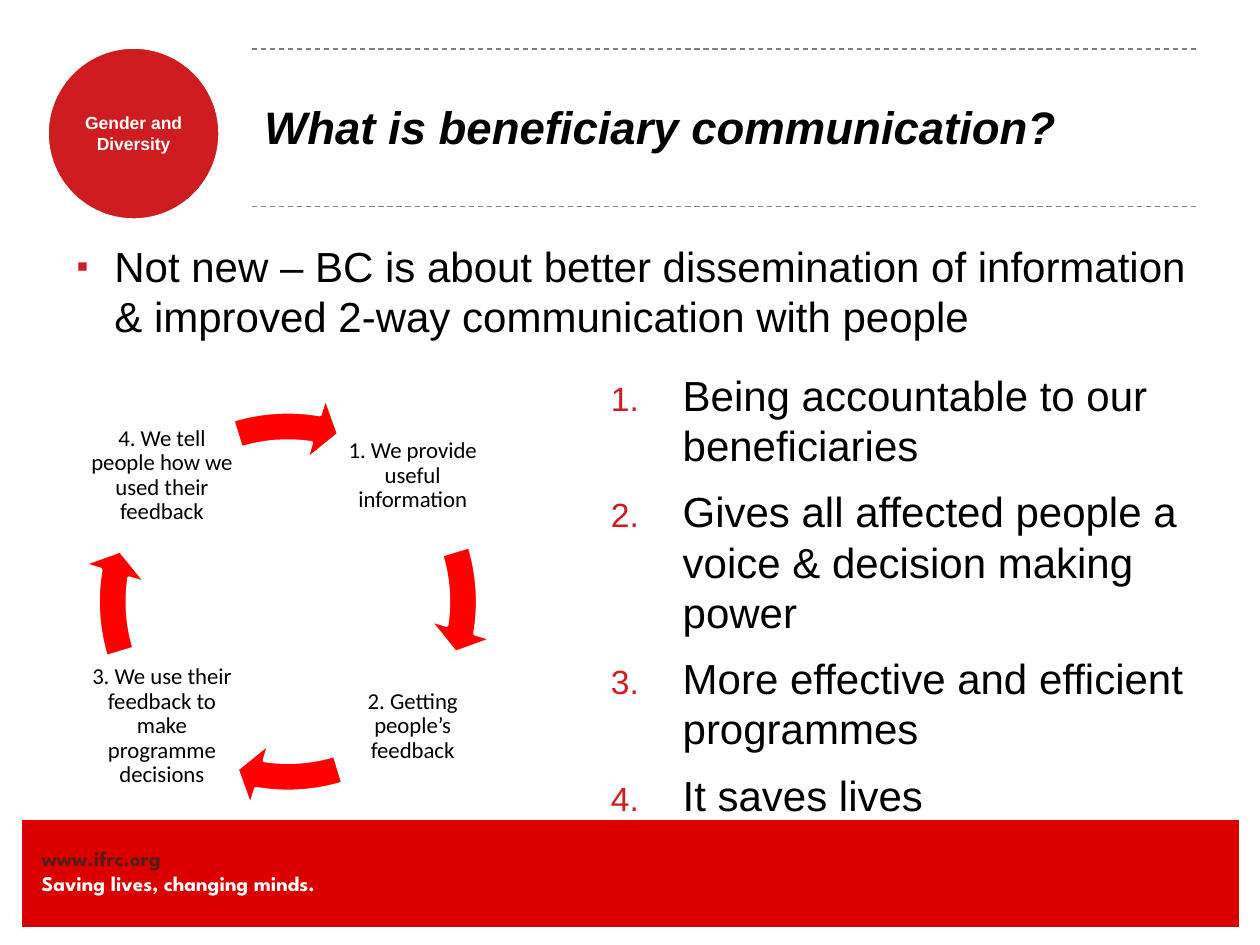
from lxml import etree
from pptx import Presentation
from pptx.dml.color import RGBColor
from pptx.enum.dml import MSO_LINE
from pptx.enum.shapes import MSO_CONNECTOR, MSO_SHAPE
from pptx.enum.text import MSO_ANCHOR, PP_ALIGN
from pptx.oxml.ns import qn
from pptx.util import Inches, Pt

TOP, MIDDLE = MSO_ANCHOR.TOP, MSO_ANCHOR.MIDDLE
LEFT, CENTER = PP_ALIGN.LEFT, PP_ALIGN.CENTER
DASH = MSO_LINE.DASH
STRAIGHT = MSO_CONNECTOR.STRAIGHT
RECTANGLE, OVAL = MSO_SHAPE.RECTANGLE, MSO_SHAPE.OVAL
CIRCULAR_ARROW = MSO_SHAPE.CIRCULAR_ARROW

COLORS = {
    "band": "DB0000", "badge": "CF1C21", "arrow": "FF0000", "rule": "808080",
    "address": "551C15", "white": "FFFFFF", "black": "000000",
}

TITLE = "What is beneficiary communication?"
TOPIC = "Gender and Diversity"
ADDRESS = "www.ifrc.org"
MOTTO = "Saving lives, changing minds."
INTRO = ("Not new – BC is about better dissemination of information "
         "& improved 2-way communication with people")
BENEFITS = [
    "Being accountable to our beneficiaries",
    "Gives all affected people a voice & decision making power",
    "More effective and efficient programmes",
    "It saves lives",
]
CYCLE = [
    ("1. We provide useful information", 1, 0),
    ("2. Getting people’s feedback", 1, 1),
    ("3. We use their feedback to make programme decisions", 0, 1),
    ("4. We tell people how we used their feedback", 0, 0),
]

STEP_LEFT, STEP_TOP, STEP_SIZE, STEP_PITCH = 0.7, 3.19, 1.17, 1.99
RING = (0.63, 3.12, 3.31, 3.31)
QUARTER_TURN, FULL_TURN = 54, 216
ARROW_WIDTH, ARROW_HEAD, ARROW_END, ARROW_START, ARROW_EDGE = (
    0.07, 4.66, 5.48, 205.86, 0.08)

prs = Presentation()
prs.slide_width, prs.slide_height = Inches(10), Inches(7.5)
slide = prs.slides.add_slide(prs.slide_layouts[6])


def rgb(name):
    return RGBColor.from_string(COLORS[name])


def add_bullet(paragraph, indent, tag, **attributes):
    props = paragraph._p.get_or_add_pPr()
    props.set("marL", str(Inches(indent)))
    props.set("indent", str(-Inches(indent)))
    color = etree.SubElement(props, qn("a:buClr"))
    etree.SubElement(color, qn("a:srgbClr"), val=COLORS["badge"])
    etree.SubElement(props, qn("a:buSzPct"), val="80000")
    etree.SubElement(props, qn("a:buFont"), typeface="Arial")
    etree.SubElement(props, qn(tag), **attributes)


def add_text(lines, box, size, font="Arial", colors=("black",), bold=False,
             italic=False, align=LEFT, anchor=TOP, inset=(0.1, 0.05),
             spacing=1.0, before=0, after=0, bullet=None):
    frame = slide.shapes.add_textbox(*map(Inches, box)).text_frame
    frame.word_wrap = True
    frame.vertical_anchor = anchor
    frame.margin_left = frame.margin_right = Inches(inset[0])
    frame.margin_top = frame.margin_bottom = Inches(inset[1])
    for i, line in enumerate(lines):
        paragraph = frame.paragraphs[0] if i == 0 else frame.add_paragraph()
        paragraph.alignment = align
        paragraph.line_spacing = spacing
        paragraph.space_before = Pt(before if i else 0)
        paragraph.space_after = Pt(after)
        if bullet:
            indent, tag, attributes = bullet
            add_bullet(paragraph, indent, tag, **attributes)
        run = paragraph.add_run()
        run.text = line
        run.font.name, run.font.size = font, Pt(size)
        run.font.bold, run.font.italic = bold, italic
        run.font.color.rgb = rgb(colors[i % len(colors)])


def add_figure(kind, box, fill, outline):
    figure = slide.shapes.add_shape(kind, *map(Inches, box))
    figure.shadow.inherit = False
    figure.fill.solid()
    figure.fill.fore_color.rgb = rgb(fill)
    figure.line.color.rgb = rgb("white")
    figure.line.width = Pt(outline)
    return figure


def add_rule(y):
    rule = slide.shapes.add_connector(
        STRAIGHT, Inches(2), Inches(y), Inches(9.5), Inches(y))
    rule.line.color.rgb = rgb("rule")
    rule.line.width = Pt(0.75)
    rule.line.dash_style = DASH
    etree.SubElement(rule._element.spPr, qn("a:effectLst"))


add_figure(RECTANGLE, (0.17, 6.5, 9.67, 0.86), "band", 0.75)
add_text([ADDRESS, MOTTO], (0.33, 6.71, 3.42, 0.4), 12, font="League Spartan",
         colors=("address", "white"), bold=True, inset=(0, 0))

add_figure(OVAL, (0.37, 0.37, 1.38, 1.38), "badge", 2.5)
add_text([TOPIC], (0.55, 0.89, 1.02, 0.34), 10, colors=("white",), bold=True,
         align=CENTER, inset=(0, 0))

for y in (0.39, 1.64):
    add_rule(y)
add_text([TITLE], (2, 0.38, 7.5, 1.25), 26, bold=True, italic=True, anchor=MIDDLE)

body = dict(size=24, before=4.8, after=4.2)
add_text(BENEFITS, (4.75, 2.88, 5, 3.85), **body,
         bullet=(0.57, "a:buAutoNum", {"type": "arabicPeriod"}))

for turn, (step, column, row) in enumerate(CYCLE):
    corner = (STEP_LEFT + column * STEP_PITCH, STEP_TOP + row * STEP_PITCH)
    add_text([step], (*corner, STEP_SIZE, STEP_SIZE), 13, font="Calibri",
             align=CENTER, anchor=MIDDLE, inset=(0.02, 0.02), spacing=0.9)
    arrow = add_figure(CIRCULAR_ARROW, RING, "arrow", 2)
    swing = turn * QUARTER_TURN
    settings = (ARROW_WIDTH, ARROW_HEAD, ARROW_END + swing,
                (ARROW_START + swing) % FULL_TURN, ARROW_EDGE)
    for i, setting in enumerate(settings):
        arrow.adjustments[i] = setting

add_text([INTRO], (0.51, 1.86, 9.06, 1.02), **body,
         bullet=(0.3, "a:buChar", {"char": "▪"}))

prs.save("out.pptx")
